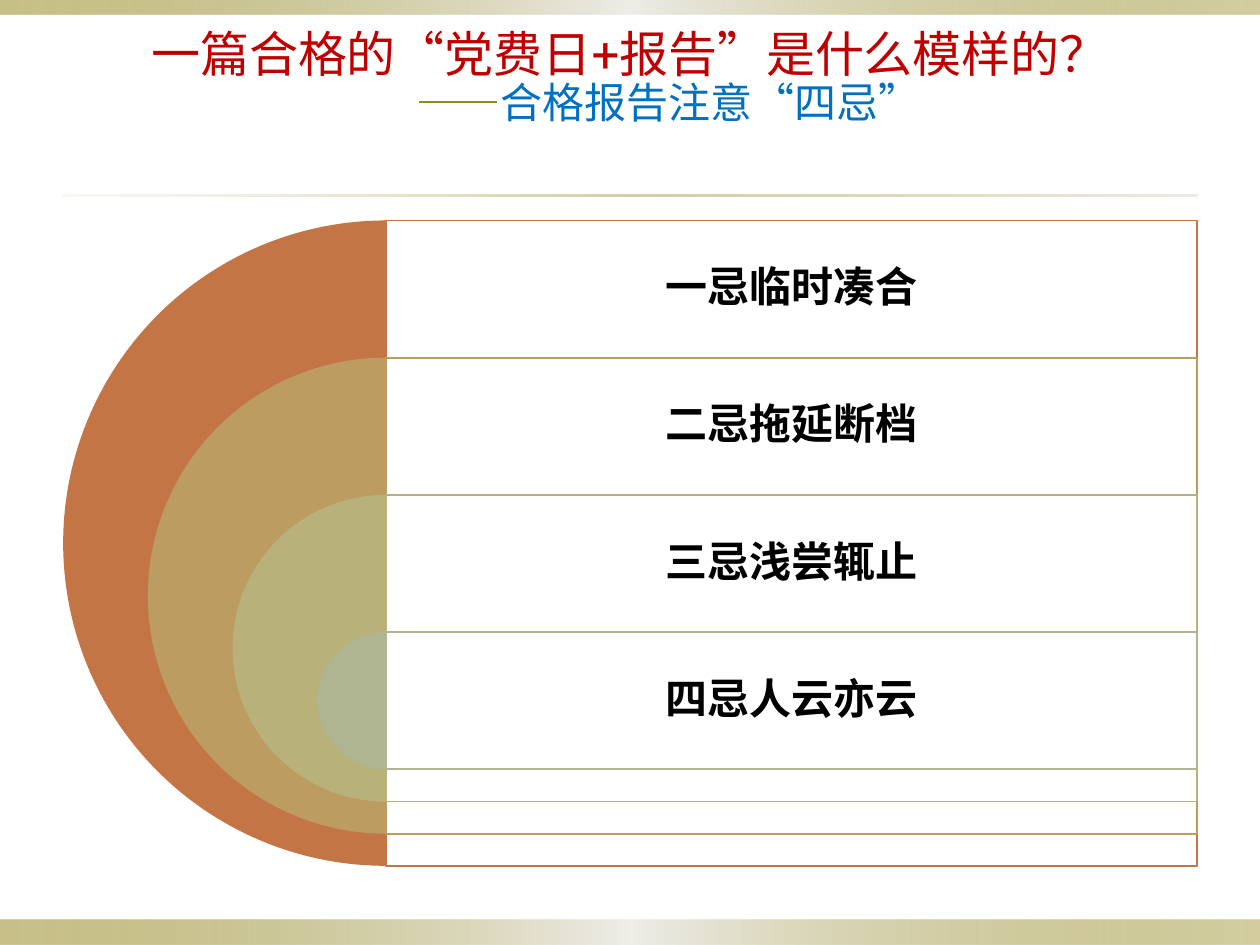
"""Build a slide with four nested half discs naming the four taboos of a report."""
from lxml.etree import SubElement
from pptx import Presentation
from pptx.dml.color import RGBColor
from pptx.enum.lang import MSO_LANGUAGE_ID as Language
from pptx.enum.shapes import MSO_SHAPE as Shape
from pptx.enum.text import MSO_ANCHOR as Anchor, PP_ALIGN as Align
from pptx.oxml.ns import qn
from pptx.util import Pt

LATIN, EAST_ASIAN = "Roboto", "Noto Sans CJK JP"
WHITE, BLACK = RGBColor(255, 255, 255), RGBColor(0, 0, 0)
RED, BLUE = RGBColor(0xC0, 0, 0), RGBColor(0, 0x70, 0xC0)
OLIVE = RGBColor(0x7D, 0x7D, 0)
MOSS, PALE = RGBColor(0x91, 0x84, 0x15), RGBColor(0xEE, 0xED, 0xE8)
SAND = RGBColor(0xDC, 0xD9, 0xCC)

BAND_STOPS = [(0, MOSS, 50), (50, PALE, 100), (100, MOSS, 40)]
RULE_STOPS = [(0, SAND, 20), (50, MOSS, 40), (100, SAND, 50)]
BARS = [
    ((0, 525.6, 720, 14.4), BAND_STOPS),
    ((0, 0, 720, 8.4), BAND_STOPS),
    ((36, 111, 648, 1.5), RULE_STOPS),
]
TITLE_LINES = [
    (0, [("一篇合格的“党费日+报告”是什么模样的？", 28, LATIN, RED)]),
    (44, [("——", 24, EAST_ASIAN, OLIVE),
          ("合格报告注意“四忌”", 24, EAST_ASIAN, BLUE)]),
]
TABOOS = [
    ("一忌临时凑合", RGBColor(0xC4, 0x75, 0x46)),
    ("二忌拖延断档", RGBColor(0xBD, 0x9C, 0x61)),
    ("三忌浅尝辄止", RGBColor(0xB8, 0xB2, 0x7A)),
    ("四忌人云亦云", RGBColor(0xAF, 0xB5, 0x91)),
]
CENTER, RIGHT, TOP = 220.5, 684, 126
ROW, BOTTOM_STEP = 78.4, 18.4


def set_alpha(color_element, percent):
    SubElement(color_element, qn("a:alpha"), val=str(percent * 1000))


def add_plain_shape(slide, kind, box):
    shape = slide.shapes.add_shape(kind, *map(Pt, box))
    shape.shadow.inherit = False
    shape.line.fill.background()
    return shape


def add_gradient_bar(slide, box, stops):
    shape = add_plain_shape(slide, Shape.RECTANGLE, box)
    shape.fill.gradient()
    shape.fill.gradient_angle = 0
    stop_list = next(shape.element.iter(qn("a:gsLst")))
    for stop in list(stop_list):
        stop_list.remove(stop)
    for position, color, alpha in stops:
        stop = SubElement(stop_list, qn("a:gs"), pos=str(position * 1000))
        set_alpha(SubElement(stop, qn("a:srgbClr"), val=str(color)), alpha)


def add_text_frame(slide, box, anchor, inset):
    frame = slide.shapes.add_textbox(*map(Pt, box)).text_frame
    frame.word_wrap = True
    frame.vertical_anchor = anchor
    frame.margin_left = frame.margin_right = Pt(inset)
    frame.margin_top = frame.margin_bottom = Pt(inset)
    return frame


def write_line(paragraph, runs, bold=False):
    paragraph.alignment = Align.CENTER
    paragraph.line_spacing = 0.9
    for text, size, font_name, color in runs:
        run = paragraph.add_run()
        run.text = text
        font = run.font
        font.size, font.name, font.bold = Pt(size), font_name, bold
        font.color.rgb = color
        font.language_id = Language.SIMPLIFIED_CHINESE
        SubElement(run.font._element, qn("a:ea"), typeface=EAST_ASIAN)


def add_title(slide):
    frame = add_text_frame(slide, (36, 17, 648, 72), Anchor.TOP, 0)
    for index, (indent, runs) in enumerate(TITLE_LINES):
        paragraph = frame.add_paragraph() if index else frame.paragraphs[0]
        paragraph._p.get_or_add_pPr().set("marL", str(Pt(indent)))
        write_line(paragraph, runs)


def add_taboo(slide, index, text, color):
    top = TOP + index * ROW
    inner_levels = len(TABOOS) - 1 - index
    diameter = ROW + inner_levels * (ROW + BOTTOM_STEP)
    width = RIGHT - CENTER

    disc = add_plain_shape(slide, Shape.PIE,
                           (CENTER - diameter / 2, top, diameter, diameter))
    disc.adjustments[0], disc.adjustments[1] = 54, 162
    disc.fill.solid()
    disc.fill.fore_color.rgb = color

    panel = add_plain_shape(slide, Shape.RECTANGLE, (CENTER, top, width, diameter))
    panel.fill.solid()
    panel.fill.fore_color.rgb = WHITE
    set_alpha(next(panel.element.iter(qn("a:srgbClr"))), 90)
    panel.line.color.rgb = color
    panel.line.width = Pt(1)

    frame = add_text_frame(slide, (CENTER, top, width, ROW), Anchor.MIDDLE, 7.2)
    write_line(frame.paragraphs[0], [(text, 24, LATIN, BLACK)], bold=True)


def main():
    presentation = Presentation()
    presentation.slide_width, presentation.slide_height = Pt(720), Pt(540)
    slide = presentation.slides.add_slide(presentation.slide_layouts[6])
    for box, stops in BARS:
        add_gradient_bar(slide, box, stops)
    add_title(slide)
    for index, (text, color) in enumerate(TABOOS):
        add_taboo(slide, index, text, color)
    presentation.save("out.pptx")


if __name__ == "__main__":
    main()
